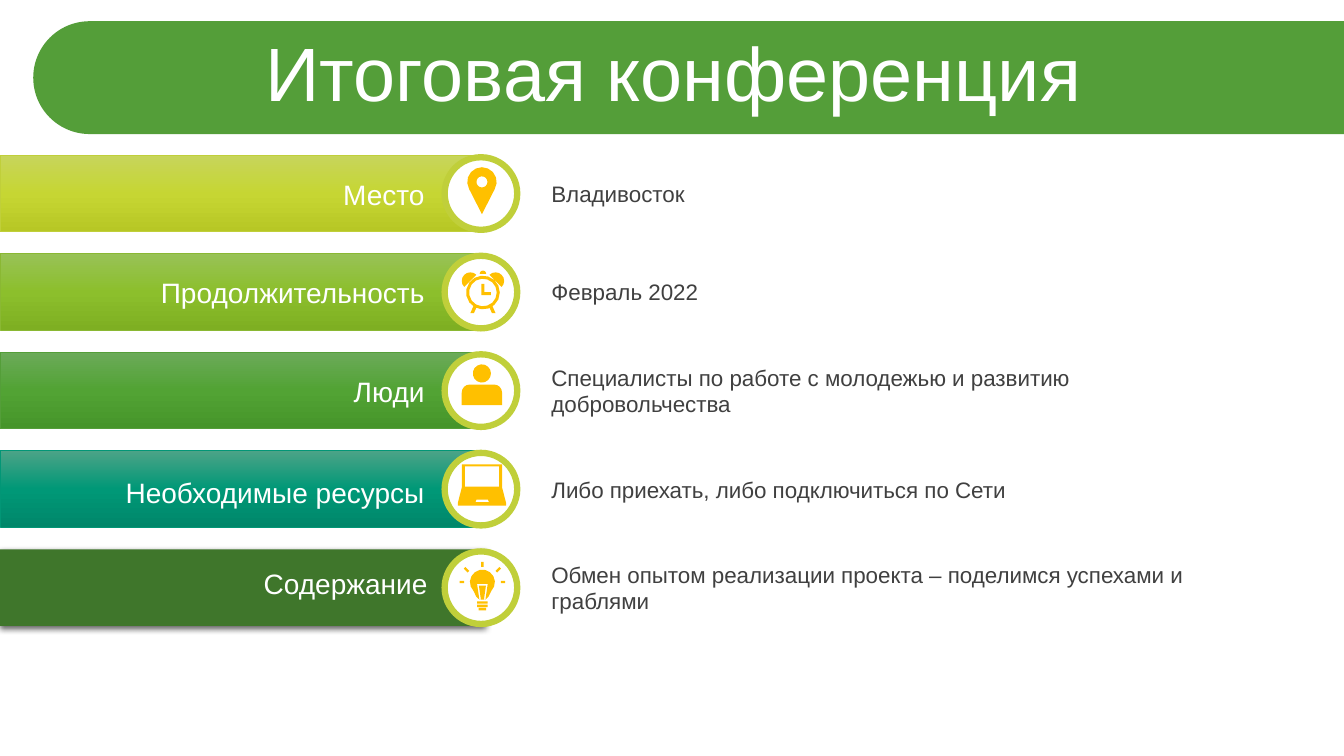
from math import cos, hypot, radians, sin

from lxml import etree
from pptx import Presentation
from pptx.dml.color import RGBColor
from pptx.enum.shapes import MSO_SHAPE
from pptx.enum.text import MSO_ANCHOR, PP_ALIGN
from pptx.oxml import parse_xml
from pptx.oxml.ns import nsdecls, qn
from pptx.util import Inches, Pt

RECTANGLE, OVAL = MSO_SHAPE.RECTANGLE, MSO_SHAPE.OVAL
ROUNDED_END = MSO_SHAPE.ROUND_2_SAME_RECTANGLE
MIDDLE, TOP = MSO_ANCHOR.MIDDLE, MSO_ANCHOR.TOP
LEFT, CENTER, RIGHT = PP_ALIGN.LEFT, PP_ALIGN.CENTER, PP_ALIGN.RIGHT

FONT = "Arial"
COLORS = {"banner": "549E39", "white": "FFFFFF", "detail": "404040",
          "ring": "C0CF3A", "icon": "FFC000", "content": "3F762B",
          "shadow": "000000"}
UNITS_PER_INCH = 1000
ARC_STEP = 24


def rgb(name):
    """Return the named palette colour."""
    return RGBColor.from_string(COLORS[name])


def arc(x, y, radius, start=0, end=360):
    """Return points along a clockwise arc, angles in degrees."""
    steps = round((end - start) / ARC_STEP)
    angles = [radians(start + (end - start) * i / steps) for i in range(steps + 1)]
    return [(x + radius * cos(a), y + radius * sin(a)) for a in angles]


def stroke(x1, y1, x2, y2, half_width):
    """Return the outline of a straight stroke."""
    length = hypot(x2 - x1, y2 - y1)
    dx, dy = (y1 - y2) * half_width / length, (x2 - x1) * half_width / length
    return [(x1 + dx, y1 + dy), (x2 + dx, y2 + dy),
            (x2 - dx, y2 - dy), (x1 - dx, y1 - dy)]


def pin_icon():
    """Return the outlines of the map pin."""
    return [arc(10, -115, 146, 150, 390) + [(10, 205)], arc(10, -115, 55)]


def clock_icon():
    """Return the outlines of the alarm clock."""
    x, y = 20, 5
    hands = [(5, -80), (35, -80), (35, 0), (100, 0), (100, 30), (5, 30)]
    legs = [[(x + side * dx, dy) for dx, dy in
             [(65, 155), (95, 140), (125, 210), (90, 210)]] for side in (-1, 1)]
    return [arc(x, y, 167), arc(x, y, 137), hands, *legs,
            arc(x - 125, -110, 85, 135, 315), arc(x + 125, -110, 85, 225, 405),
            arc(x, -180, 32, 180, 360)]


def person_icon():
    """Return the outlines of the person."""
    body = (arc(-110, 20, 80, 180, 270) + arc(130, 20, 80, 270, 360)
            + [(210, 145), (-190, 145)])
    return [arc(10, -170, 90), body]


def laptop_icon():
    """Return the outlines of the laptop."""
    case = [(-190, -245), (210, -245), (210, -15), (250, 140), (250, 165),
            (-230, 165), (-230, 140), (-190, -15)]
    screen = [(-160, -225), (180, -225), (180, -25), (-160, -25)]
    touchpad = [(-45, 105), (70, 105), (80, 130), (-55, 130)]
    return [case, screen, touchpad]


def bulb_icon():
    """Return the outlines of the light bulb."""
    x = 15
    glass = arc(x, -55, 124, 135, 405) + [(75, 90), (45, 118), (-15, 118), (-45, 90)]
    filament = [(-38, -38), (68, -38), (45, 118), (30, 118), (50, -20),
                (-20, -20), (0, 118), (-15, 118)]
    bases = [stroke(x - half, y, x + half, y, 12)
             for half, y in ((52, 147), (52, 180), (37, 213))]
    rays = [stroke(x, -255, x, -205, 13)]
    for side in (-1, 1):
        rays += [stroke(x + side * 138, -158, x + side * 177, -197, 11),
                 stroke(x + side * 182, -55, x + side * 226, -55, 11)]
    return [glass, filament, *bases, *rays]


ROWS = [
    ("Место", "Владивосток", pin_icon, 0.17, 4.31,
     ("C7D55B", "C6D633", "B7C725", "C0CF3A")),
    ("Продолжительность", "Февраль 2022", clock_icon, 0.17, 4.31,
     ("98C256", "8CBF2C", "7EAF22", "8AB833")),
    ("Люди", "Специалисты по работе с молодежью и развитию добровольчества",
     person_icon, 0.17, 4.31, ("6BAA59", "52A334", "46952A", "549E39")),
    ("Необходимые ресурсы", "Либо приехать, либо подключиться по Сети",
     laptop_icon, 0.2, 4.31, ("4BA387", "009877", "00876A", "029676")),
    ("Содержание",
     "Обмен опытом реализации проекта – поделимся успехами и граблями",
     bulb_icon, 0.12, 4.34, None),
]


def write(shape, text, size, color, align, anchor):
    """Put one formatted paragraph into a shape."""
    frame = shape.text_frame
    frame.text = text
    frame.word_wrap = True
    frame.vertical_anchor = anchor
    paragraph = frame.paragraphs[0]
    paragraph.alignment = align
    font = paragraph.runs[0].font
    font.name, font.size, font.color.rgb = FONT, Pt(size), rgb(color)
    return paragraph


def add_text(slide, box, *style):
    """Add a text box, box in inches."""
    write(slide.shapes.add_textbox(*map(Inches, box)), *style)


def fill_plain(shape, color):
    """Give a shape a flat fill without outline or shadow."""
    shape.shadow.inherit = False
    shape.fill.solid()
    shape.fill.fore_color.rgb = rgb(color)
    shape.line.fill.background()


def add_plain(slide, kind, box, color):
    """Add a flat preset shape, box in inches."""
    shape = slide.shapes.add_shape(kind, *map(Inches, box))
    fill_plain(shape, color)
    return shape


def add_gradient(bar, shades):
    """Give a bar its vertical gradient and thin outline."""
    *stops, edge = shades
    marks = "".join(f'<a:gs pos="{i * 50000}"><a:srgbClr val="{shade}"/></a:gs>'
                    for i, shade in enumerate(stops))
    gradient = parse_xml(f'<a:gradFill {nsdecls("a")} rotWithShape="1"><a:gsLst>{marks}'
                         '</a:gsLst><a:lin ang="5400000" scaled="0"/></a:gradFill>')
    properties = bar._element.spPr
    properties.replace(properties.find(qn("a:solidFill")), gradient)
    bar.line.color.rgb = RGBColor.from_string(edge)
    bar.line.width = Pt(0.5)


def add_shadow(bar):
    """Drop a soft shadow below a bar."""
    effects = bar._element.spPr.find(qn("a:effectLst"))
    shadow = etree.SubElement(effects, qn("a:outerShdw"), blurRad=str(Pt(4.5)),
                              dist=str(Pt(1.5)), dir="5400000", rotWithShape="0")
    tone = etree.SubElement(shadow, qn("a:srgbClr"), val=COLORS["shadow"])
    etree.SubElement(tone, qn("a:alpha"), val="63000")


def add_icon(slide, x, y, outlines):
    """Draw an icon whose outlines are measured from the point x, y."""
    first, *others = outlines
    builder = slide.shapes.build_freeform(*first[0], scale=Inches(1) / UNITS_PER_INCH)
    builder.add_line_segments(first[1:], close=True)
    for outline in others:
        builder.move_to(*outline[0])
        builder.add_line_segments(outline[1:], close=True)
    fill_plain(builder.convert_to_shape(Inches(x), Inches(y)), "icon")


def add_banner(slide, left, top, width, height):
    """Place the rounded banner behind the slide title."""
    box = (left + (width - height) / 2, top + (height - width) / 2, height, width)
    banner = add_plain(slide, ROUNDED_END, box, "banner")
    banner.adjustments[0], banner.adjustments[1] = 0.5, 0
    banner.rotation = 270
    slide.shapes._spTree.insert(2, banner._element)
    title = slide.shapes.title
    title.left, title.top = Inches(left + 0.02), Inches(top + 0.16)
    title.width, title.height = Inches(12.66), Inches(0.79)
    paragraph = write(title, "Итоговая конференция", 54, "white", CENTER, MIDDLE)
    paragraph.line_spacing = 0.9


def add_row(slide, top, width, height, row):
    """Place one bar with its label, icon and detail."""
    label, detail, icon, label_drop, label_right, shades = row
    bar = add_plain(slide, RECTANGLE, (0, top, width, height), "content")
    if shades:
        add_gradient(bar, shades)
    else:
        add_shadow(bar)
    x, y, diameter = width - 0.04, top + height / 2, 0.72
    ring = add_plain(slide, OVAL, (x - diameter / 2, y - diameter / 2,
                                   diameter, diameter), "white")
    ring.line.color.rgb = rgb("ring")
    ring.line.width = Pt(4.5)
    add_text(slide, (label_right - 3.76, top + label_drop, 3.76, 0.44),
             label, 20, "white", RIGHT, TOP)
    add_text(slide, (width + 0.56, top, 7.05, height),
             detail, 16, "detail", LEFT, MIDDLE)
    add_icon(slide, x, y, icon())


def main():
    """Build the conference slide."""
    deck = Presentation()
    deck.slide_width, deck.slide_height = Inches(13.33), Inches(7.5)
    slide = deck.slides.add_slide(deck.slide_layouts[5])
    add_banner(slide, 0.33, 0.21, 13, 1.12)
    first_top, last_top = 1.54, 5.45
    pitch = (last_top - first_top) / (len(ROWS) - 1)
    for i, row in enumerate(ROWS):
        add_row(slide, first_top + i * pitch, 4.81, 0.76, row)
    deck.save("out.pptx")


if __name__ == "__main__":
    main()
